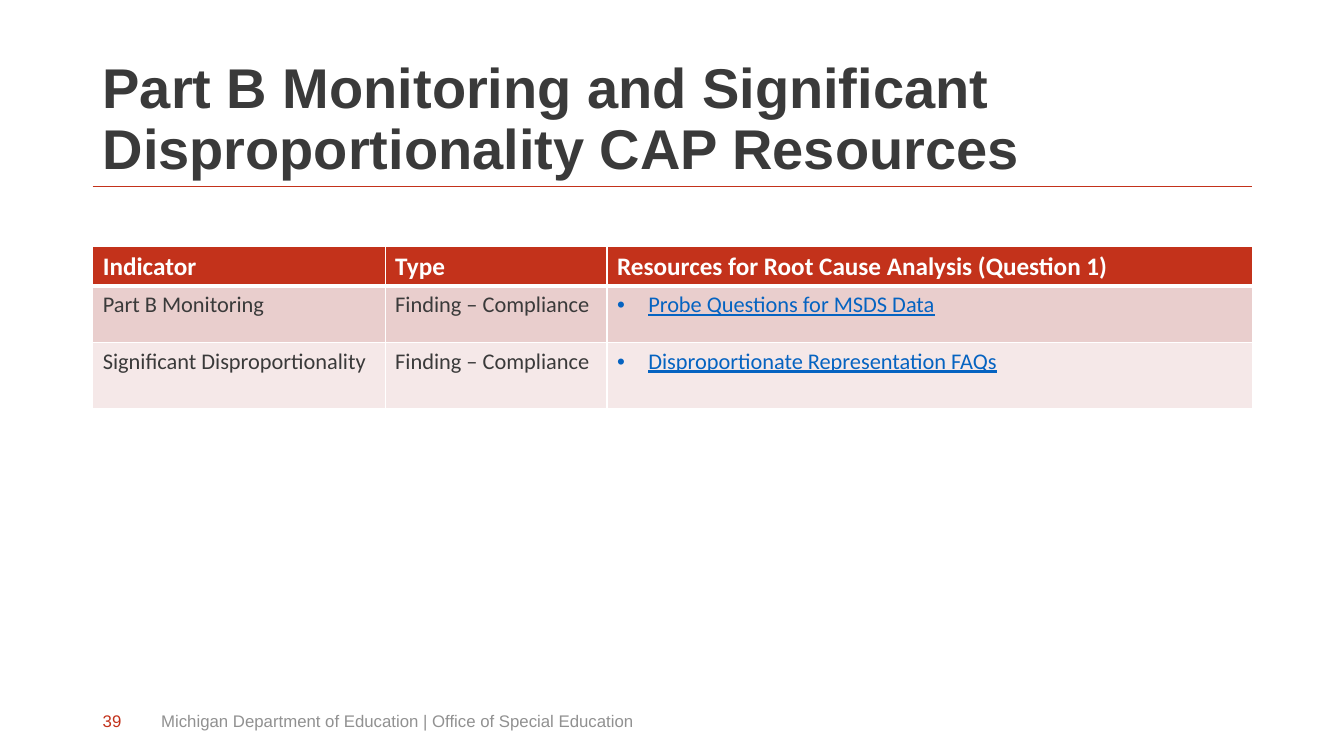
from dataclasses import dataclass

from lxml.etree import SubElement
from pptx import Presentation
from pptx.dml.color import RGBColor
from pptx.enum.shapes import MSO_CONNECTOR
from pptx.enum.text import MSO_ANCHOR as Anchor
from pptx.oxml.ns import qn
from pptx.util import Inches, Pt


@dataclass(frozen=True)
class Theme:
    heading_font: str = "Arial"
    table_font: str = "Calibri"
    title_size: int = 40
    header_size: int = 18
    body_size: int = 16
    footer_size: int = 12
    accent: str = "C3321B"
    ink: str = "3A3A3A"
    muted: str = "919191"
    link: str = "0563C1"
    white: str = "FFFFFF"
    bands: tuple = ("E9CECD", "F5E8E8")


THEME = Theme()
LEFT, WIDTH = 0.92, 11.5
COLUMN_WIDTHS = (2.9, 2.2, 6.4)
ROW_HEIGHTS = (0.4, 0.56, 0.65)
BULLET_INDENT = Inches(0.31)
ROWS = (
    ("Indicator", "Type", "Resources for Root Cause Analysis (Question 1)"),
    ("Part B Monitoring", "Finding – Compliance", "Probe Questions for MSDS Data"),
    ("Significant Disproportionality", "Finding – Compliance",
     "Disproportionate Representation FAQs"),
)


def add_run(paragraph, text, font, size, color, bold=False, underline=False):
    run = paragraph.add_run()
    run.text = text
    run.font.name = font
    run.font.size = Pt(size)
    run.font.bold = bold
    run.font.underline = underline
    run.font.color.rgb = RGBColor.from_string(color)


def add_text(slide, text, box, size, color, anchor=Anchor.MIDDLE, bold=False,
             line_spacing=None):
    frame = slide.shapes.add_textbox(*map(Inches, box)).text_frame
    frame.word_wrap = True
    frame.vertical_anchor = anchor
    paragraph = frame.paragraphs[0]
    paragraph.line_spacing = line_spacing
    add_run(paragraph, text, THEME.heading_font, size, color, bold)


def add_title_rule(slide, top):
    rule = slide.shapes.add_connector(
        MSO_CONNECTOR.STRAIGHT,
        Inches(LEFT), Inches(top), Inches(LEFT + WIDTH), Inches(top))
    rule.line.color.rgb = RGBColor.from_string(THEME.accent)
    rule.line.width = Pt(0.5)
    SubElement(rule.element.spPr, qn("a:effectLst"))


def add_bullet(paragraph):
    properties = paragraph._p.get_or_add_pPr()
    properties.set("marL", str(BULLET_INDENT))
    properties.set("indent", str(-BULLET_INDENT))
    SubElement(properties, qn("a:buFont"), typeface="Arial")
    SubElement(properties, qn("a:buChar"), char="•")


def set_borders(cell, top, bottom):
    """Draw white borders, with top and bottom widths in points."""
    properties = cell._tc.get_or_add_tcPr()
    for side, width in (("L", 1), ("R", 1), ("T", top), ("B", bottom)):
        border = SubElement(properties, qn(f"a:ln{side}"), w=str(Pt(width)))
        fill = SubElement(border, qn("a:solidFill"))
        SubElement(fill, qn("a:srgbClr"), val=THEME.white)


def fill_cell(cell, text, row, column):
    is_header = row == 0
    is_resource = not is_header and column == len(COLUMN_WIDTHS) - 1
    set_borders(cell, top=3 if row == 1 else 1, bottom=3 if is_header else 1)
    cell.fill.solid()
    cell.fill.fore_color.rgb = RGBColor.from_string(
        THEME.accent if is_header else THEME.bands[row - 1])
    cell.vertical_anchor = Anchor.MIDDLE if is_header else Anchor.TOP
    paragraph = cell.text_frame.paragraphs[0]
    if is_resource:
        add_bullet(paragraph)
    size = THEME.header_size if is_header else THEME.body_size
    color = THEME.white if is_header else THEME.link if is_resource else THEME.ink
    add_run(paragraph, text, THEME.table_font, size, color,
            bold=is_header, underline=is_resource)


def add_resource_table(slide, top):
    table = slide.shapes.add_table(
        len(ROWS), len(COLUMN_WIDTHS), Inches(LEFT), Inches(top),
        Inches(WIDTH), Inches(sum(ROW_HEIGHTS))).table
    for column, width in zip(table.columns, COLUMN_WIDTHS):
        column.width = Inches(width)
    for row, height in zip(table.rows, ROW_HEIGHTS):
        row.height = Inches(height)
    for row, texts in enumerate(ROWS):
        for column, text in enumerate(texts):
            fill_cell(table.cell(row, column), text, row, column)


def main():
    deck = Presentation()
    deck.slide_width, deck.slide_height = Inches(13.33), Inches(7.5)
    slide = deck.slides.add_slide(deck.slide_layouts[6])
    add_title_rule(slide, 1.85)
    add_text(slide, "Part B Monitoring and Significant Disproportionality CAP Resources",
             (LEFT, 0.4, WIDTH, 1.45), THEME.title_size, THEME.ink,
             Anchor.BOTTOM, bold=True, line_spacing=0.9)
    add_resource_table(slide, 2.44)
    add_text(slide, "Michigan Department of Education | Office of Special Education",
             (1.5, 6.95, 8.39, 0.4), THEME.footer_size, THEME.muted)
    add_text(slide, "39", (LEFT, 6.95, 0.45, 0.4), THEME.footer_size, THEME.accent)
    deck.save("out.pptx")


if __name__ == "__main__":
    main()
